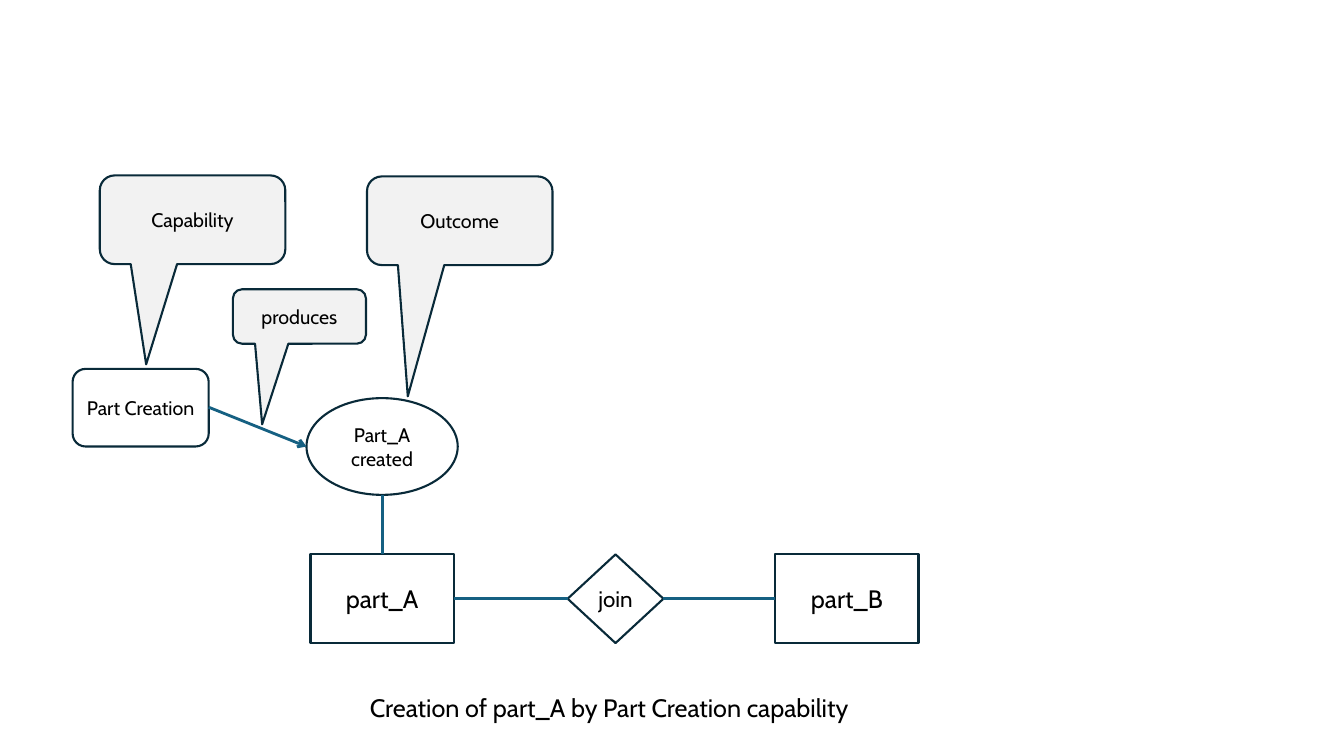
from dataclasses import dataclass

from lxml import etree
from pptx import Presentation, util as u
from pptx.dml import color
from pptx.enum import shapes, text
from pptx.oxml import ns

PX = 9144
Kind = shapes.MSO_SHAPE


@dataclass(frozen=True)
class Theme:
    font: str = "Cabin"
    ink: str = "000000"
    paper: str = "FFFFFF"
    callout: str = "F2F2F2"
    outline: str = "092A39"
    link: str = "156082"
    outline_width: float = 1.5
    link_width: float = 2
    small: int = 14
    medium: int = 16
    large: int = 18


THEME = Theme()


@dataclass(frozen=True)
class Node:
    label: str
    kind: Kind
    left: int
    top: int
    width: int
    height: int
    size: int = THEME.small
    fill: str = THEME.paper
    adjustments: tuple[float, ...] = ()
    side_inset: int = 10

    def side(self, name: str) -> tuple[int, int]:
        across, down = {
            "top": (0.5, 0), "bottom": (0.5, 1),
            "left": (0, 0.5), "right": (1, 0.5),
        }[name]
        return (round(self.left + across * self.width),
                round(self.top + down * self.height))


@dataclass(frozen=True)
class Link:
    source: Node
    source_side: str
    target: Node
    target_side: str
    arrow: bool = False


def callout(label: str, left: int, top: int, width: int, height: int,
            tip: tuple[float, float]) -> Node:
    return Node(label, Kind.ROUNDED_RECTANGULAR_CALLOUT, left, top, width, height,
                fill=THEME.callout, adjustments=(*tip, 0.167))


PART_A = Node("part_A", Kind.RECTANGLE, 308, 550, 142, 88, THEME.large)
PART_B = Node("part_B", Kind.RECTANGLE, 769, 550, 142, 88, THEME.large)
JOIN = Node("join", Kind.DIAMOND, 563, 550, 95, 88, THEME.medium, side_inset=0)
CREATED = Node("Part_A created", Kind.OVAL, 304, 395, 150, 96)
CREATION = Node("Part Creation", Kind.ROUNDED_RECTANGLE, 72, 366, 135, 77)
CALLOUTS = (
    callout("Capability", 99, 174, 184, 88, (-0.25, 1.63)),
    callout("Outcome", 364, 175, 184, 88, (-0.28, 1.98)),
    callout("produces", 231, 287, 132, 54, (-0.28, 1.98)),
)
NODES = (PART_A, PART_B, JOIN, CREATED, CREATION)
LINKS = (
    Link(JOIN, "left", PART_A, "right"),
    Link(PART_B, "left", JOIN, "right"),
    Link(PART_A, "top", CREATED, "bottom"),
    Link(CREATION, "right", CREATED, "left", arrow=True),
)


def px(value: int) -> u.Emu:
    return u.Emu(value * PX)


def rgb(value: str) -> color.RGBColor:
    return color.RGBColor.from_string(value)


def write(frame, content: str, *, size: int, align=text.PP_ALIGN.LEFT,
          anchor=text.MSO_ANCHOR.TOP, wrap: bool = True, side_inset: int = 10) -> None:
    frame.word_wrap = wrap
    frame.vertical_anchor = anchor
    frame.margin_left = frame.margin_right = px(side_inset)
    frame.margin_top = frame.margin_bottom = px(5)
    para = frame.paragraphs[0]
    para.alignment = align
    span = para.add_run()
    span.text = content
    span.font.name = THEME.font
    span.font.size = u.Pt(size)
    span.font.color.rgb = rgb(THEME.ink)


def draw_node(page, node: Node) -> None:
    box = page.shapes.add_shape(node.kind, px(node.left), px(node.top),
                                px(node.width), px(node.height))
    box.shadow.inherit = False
    for index, value in enumerate(node.adjustments):
        box.adjustments[index] = value
    box.fill.solid()
    box.fill.fore_color.rgb = rgb(node.fill)
    box.line.color.rgb = rgb(THEME.outline)
    box.line.width = u.Pt(THEME.outline_width)
    write(box.text_frame, node.label, size=node.size, align=text.PP_ALIGN.CENTER,
          anchor=text.MSO_ANCHOR.MIDDLE, side_inset=node.side_inset)


def draw_link(page, link: Link) -> None:
    start = link.source.side(link.source_side)
    end = link.target.side(link.target_side)
    connector = page.shapes.add_connector(
        shapes.MSO_CONNECTOR.STRAIGHT, *map(px, start + end))
    connector.line.color.rgb = rgb(THEME.link)
    connector.line.width = u.Pt(THEME.link_width)
    if link.arrow:
        etree.SubElement(connector.line._get_or_add_ln(), ns.qn("a:tailEnd"), type="arrow")
    etree.SubElement(connector._element.spPr, ns.qn("a:effectLst"))


def main() -> None:
    deck = Presentation()
    deck.slide_width, deck.slide_height = px(1333), px(750)
    page = deck.slides.add_slide(deck.slide_layouts.get_by_name("Blank"))
    for node in NODES:
        draw_node(page, node)
    for link in LINKS:
        draw_link(page, link)
    for node in CALLOUTS:
        draw_node(page, node)
    caption = page.shapes.add_textbox(px(357), px(682), px(507), px(40))
    write(caption.text_frame, "Creation of part_A by Part Creation capability",
          size=THEME.large, wrap=False)
    deck.save("out.pptx")


if __name__ == "__main__":
    main()
